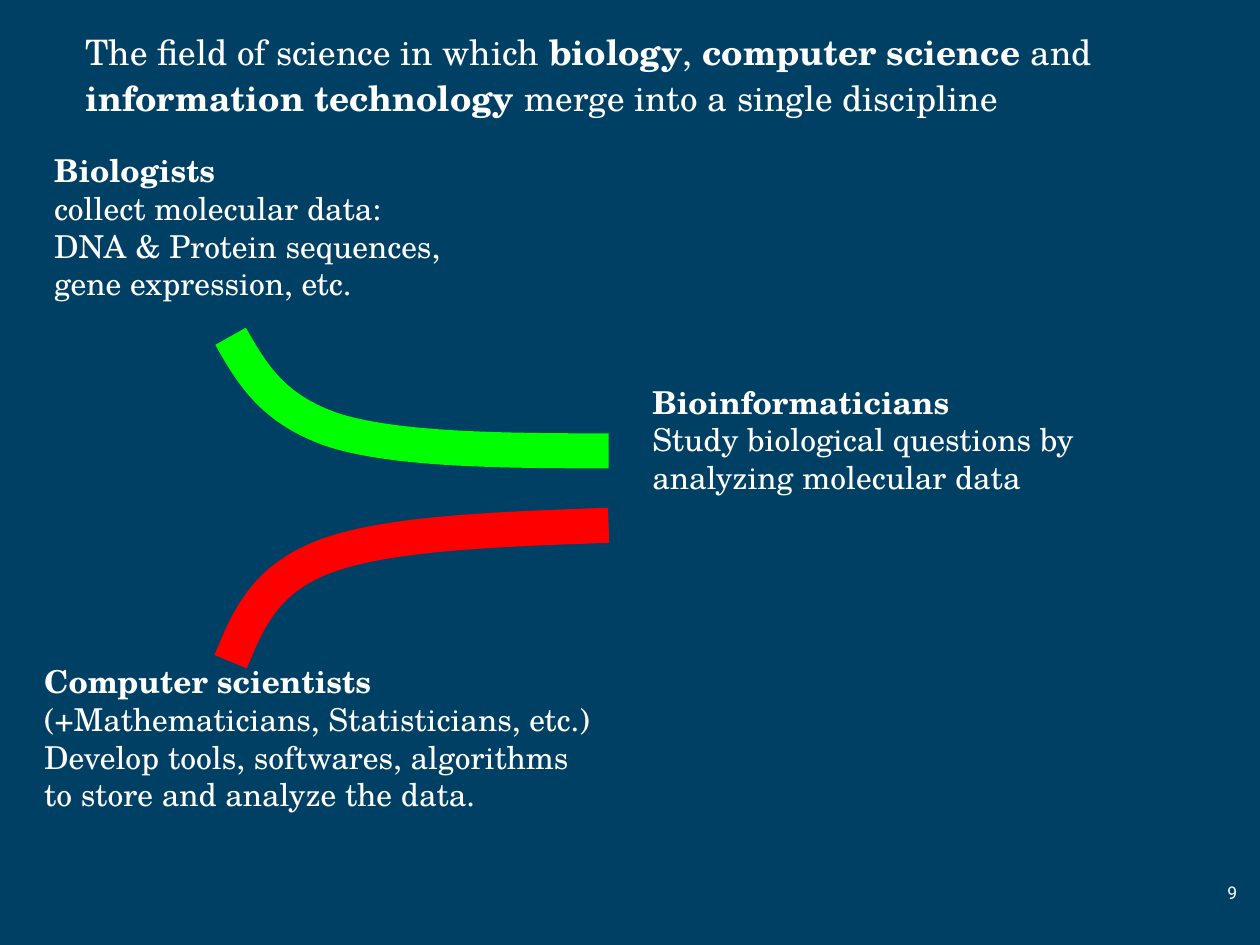
from pptx import Presentation
from pptx.util import Cm, Pt
from pptx.dml.color import RGBColor
from pptx.enum.shapes import MSO_SHAPE
from pptx.enum.text import MSO_ANCHOR, PP_ALIGN

HUES = {"navy": "004065", "white": "FFFFFF", "green": "00FF00", "red": "FF0000"}
FACE = "TeX Gyre Schola"


def hue(name):
    """Return the colour of that name."""
    return RGBColor.from_string(HUES[name])


def bend(a, b, c, d, steps=24):
    """Return points along a cubic curve, without its first point."""
    spots = []
    for i in range(1, steps + 1):
        t = i / steps
        u = 1 - t
        parts = (u ** 3, 3 * u * u * t, 3 * u * t * t, t ** 3)
        spots.append(tuple(Cm(sum(k * p[n] for k, p in zip(parts, (a, b, c, d))))
                           for n in (0, 1)))
    return spots


class Deck:
    """Hold the style and the current slide."""

    def __init__(self):
        """Open a deck with one blank navy slide."""
        self.prs = Presentation()
        self.prs.slide_width, self.prs.slide_height = Cm(25.4), Cm(19.05)
        self.slide = self.prs.slides.add_slide(self.prs.slide_layouts[6])
        back = self.slide.background.fill
        back.solid()
        back.fore_color.rgb = hue("navy")

    def box(self, x, y, w, h):
        """Add a plain navy box and return it."""
        shape = self.slide.shapes.add_shape(
            MSO_SHAPE.RECTANGLE, Cm(x), Cm(y), Cm(w), Cm(h))
        shape.shadow.inherit = False
        shape.fill.solid()
        shape.fill.fore_color.rgb = hue("navy")
        shape.line.fill.background()
        frame = shape.text_frame
        frame.word_wrap = True
        frame.vertical_anchor = MSO_ANCHOR.TOP
        return shape

    def style(self, para, size, face=FACE, align=PP_ALIGN.LEFT):
        """Set the look of each run in a paragraph."""
        para.alignment = align
        for run in para.runs:
            font = run.font
            font.size, font.name = Pt(size), face
            font.color.rgb = hue("white")

    def title(self, place, parts):
        """Add the heading, with every second part bold."""
        para = self.box(*place).text_frame.paragraphs[0]
        para.line_spacing = 1.1
        for i, text in enumerate(parts):
            run = para.add_run()
            run.text = text
            run.font.bold = i % 2 == 1
        self.style(para, 20)

    def group(self, place, text):
        """Add a text box whose first line is bold."""
        frame = self.box(*place).text_frame
        frame.text = text
        for i, para in enumerate(frame.paragraphs):
            self.style(para, 18)
            for run in para.runs:
                run.font.bold = i == 0

    def curve(self, color, start, *arcs):
        """Draw a thick open curve through cubic arcs."""
        form = self.slide.shapes.build_freeform(Cm(start[0]), Cm(start[1]))
        for arc in arcs:
            form.add_line_segments(bend(start, *arc), close=False)
            start = arc[-1]
        shape = form.convert_to_shape()
        shape.shadow.inherit = False
        shape.fill.solid()
        shape.fill.fore_color.rgb = hue("navy")
        shape.line.color.rgb = hue(color)
        shape.line.width = Pt(20)

    def number(self, place, text):
        """Add the slide number."""
        frame = self.box(*place).text_frame
        frame.margin_left = frame.margin_right = Cm(0.13)
        frame.vertical_anchor = MSO_ANCHOR.MIDDLE
        frame.text = text
        self.style(frame.paragraphs[0], 10, "Roboto", PP_ALIGN.RIGHT)


def main():
    """Build and save the slide."""
    deck = Deck()
    deck.group((0.84, 2.92, 10.59, 5.33),
               "Biologists\ncollect molecular data:\n"
               "DNA & Protein sequences,\ngene expression, etc.")
    deck.group((0.64, 13.22, 14.35, 3.34),
               "Computer scientists\n(+Mathematicians, Statisticians, etc.)\n"
               "Develop tools, softwares, algorithms\vto store and analyze the data.")
    deck.group((12.9, 7.59, 9.73, 3.33),
               "Bioinformaticians\n"
               "Study biological questions by analyzing molecular data")
    deck.curve("green", (4.65, 6.78),
               ((5.08, 7.54), (5.51, 8.28), (6.78, 8.69)),
               ((8.05, 9.07), (10.16, 9.09), (12.27, 9.09)))
    deck.curve("red", (4.65, 13.34),
               ((5, 12.5), (5.33, 11.66), (6.6, 11.2)),
               ((7.87, 10.74), (10.08, 10.67), (12.27, 10.59)))
    deck.title((1.47, 0.41, 22.66, 2.13),
               ("The field of science in which ", "biology", ", ",
                "computer science", " and ", "information technology",
                " merge into a single discipline"))
    deck.number((23.55, 17.27, 1.52, 1.45), "9")
    deck.prs.save("out.pptx")


if __name__ == "__main__":
    main()
